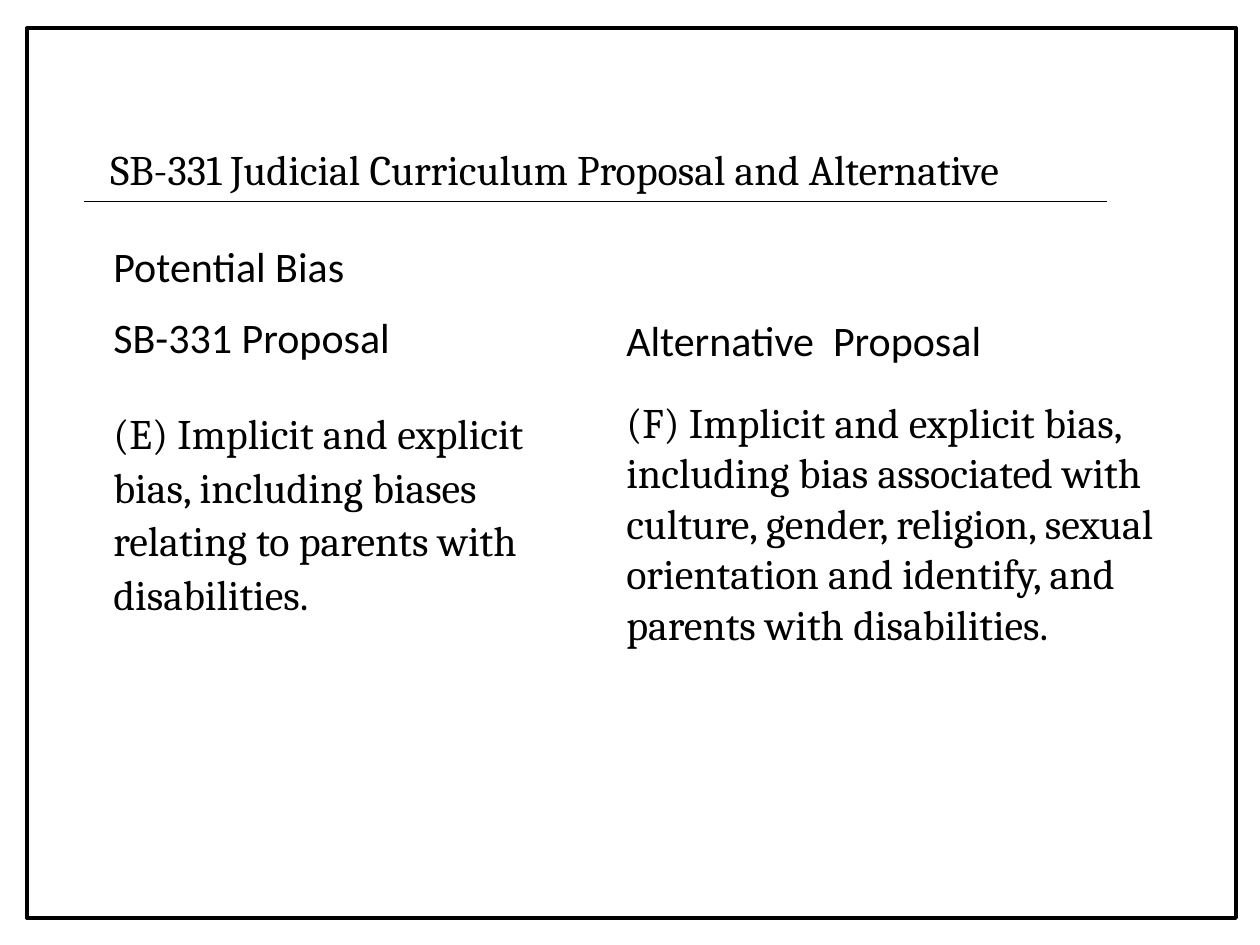
from pptx import Presentation
from pptx.dml.color import RGBColor
from pptx.enum.shapes import MSO_CONNECTOR as Connector, MSO_SHAPE as Shape
from pptx.enum.text import MSO_AUTO_SIZE as AutoSize
from pptx.oxml.ns import qn
from pptx.util import Pt
from lxml import etree

PX_PER_INCH = 126
BLACK = "000000"
HEADING, BODY = "Calibri", "Cambria"


def px(length):
    return round(length * 914400 / PX_PER_INCH)


def color(hex_code):
    return RGBColor.from_string(hex_code)


def add_para(frame, text, first=False, font=BODY, size=24, ink=BLACK,
             spacing=1.0, before=0, after=0):
    para = frame.paragraphs[0] if first else frame.add_paragraph()
    para.line_spacing = spacing
    para.space_before, para.space_after = Pt(before), Pt(after)
    span = para.add_run()
    span.text = text
    span.font.name, span.font.size = font, Pt(size)
    span.font.color.rgb = color(ink)


class Page:
    """Holds the line style and the slide being drawn."""

    def __init__(self, slide, ink=BLACK):
        self.slide = slide
        self.ink = ink

    def style_line(self, line, width):
        line.color.rgb = color(self.ink)
        line.width = Pt(width)

    def text(self, left, top, width, height, *paras):
        """Each para is a (text, format) pair."""
        box = self.slide.shapes.add_textbox(*map(px, (left, top, width, height)))
        frame = box.text_frame
        frame.word_wrap = True
        frame.auto_size = AutoSize.SHAPE_TO_FIT_TEXT
        for index, (text, style) in enumerate(paras):
            add_para(frame, text, first=index == 0, **style)

    def rule(self, left, right, y, width):
        line = self.slide.shapes.add_connector(
            Connector.STRAIGHT, px(left), px(y), px(right), px(y))
        self.style_line(line.line, width)
        etree.SubElement(line._element.spPr, qn("a:effectLst"))

    def frame(self, left, top, width, height, line_width):
        box = self.slide.shapes.add_shape(
            Shape.RECTANGLE, *map(px, (left, top, width, height)))
        box.shadow.inherit = False
        box.fill.background()
        self.style_line(box.line, line_width)


def main():
    deck = Presentation()
    deck.slide_width, deck.slide_height = px(1260), px(945)
    page = Page(deck.slides.add_slide(deck.slide_layouts[6]))

    page.text(98, 134, 1032, 64,
              ("SB-331 Judicial Curriculum Proposal and Alternative",
               dict(spacing=1.07, before=6, after=6)))
    page.text(101, 305, 513, 321,
              ("SB-331 Proposal", dict(font=HEADING, after=18)),
              ("(E) Implicit and explicit bias, including biases relating to "
               "parents with disabilities.",
               dict(spacing=1.07, before=6, after=18)))
    page.text(614, 305, 580, 354,
              ("Alternative  Proposal",
               dict(font=HEADING, spacing=1.07, before=18)),
              ("(F) Implicit and explicit bias, including bias associated with "
               "culture, gender, religion, sexual orientation and identify, "
               "and parents with disabilities.", dict(before=18)))
    page.text(101, 234, 609, 63, ("Potential Bias", dict(font=HEADING)))
    page.rule(84, 1107, 201, 0.5)
    page.frame(27, 28, 1209, 890, 2.25)

    deck.save("out.pptx")


if __name__ == "__main__":
    main()
